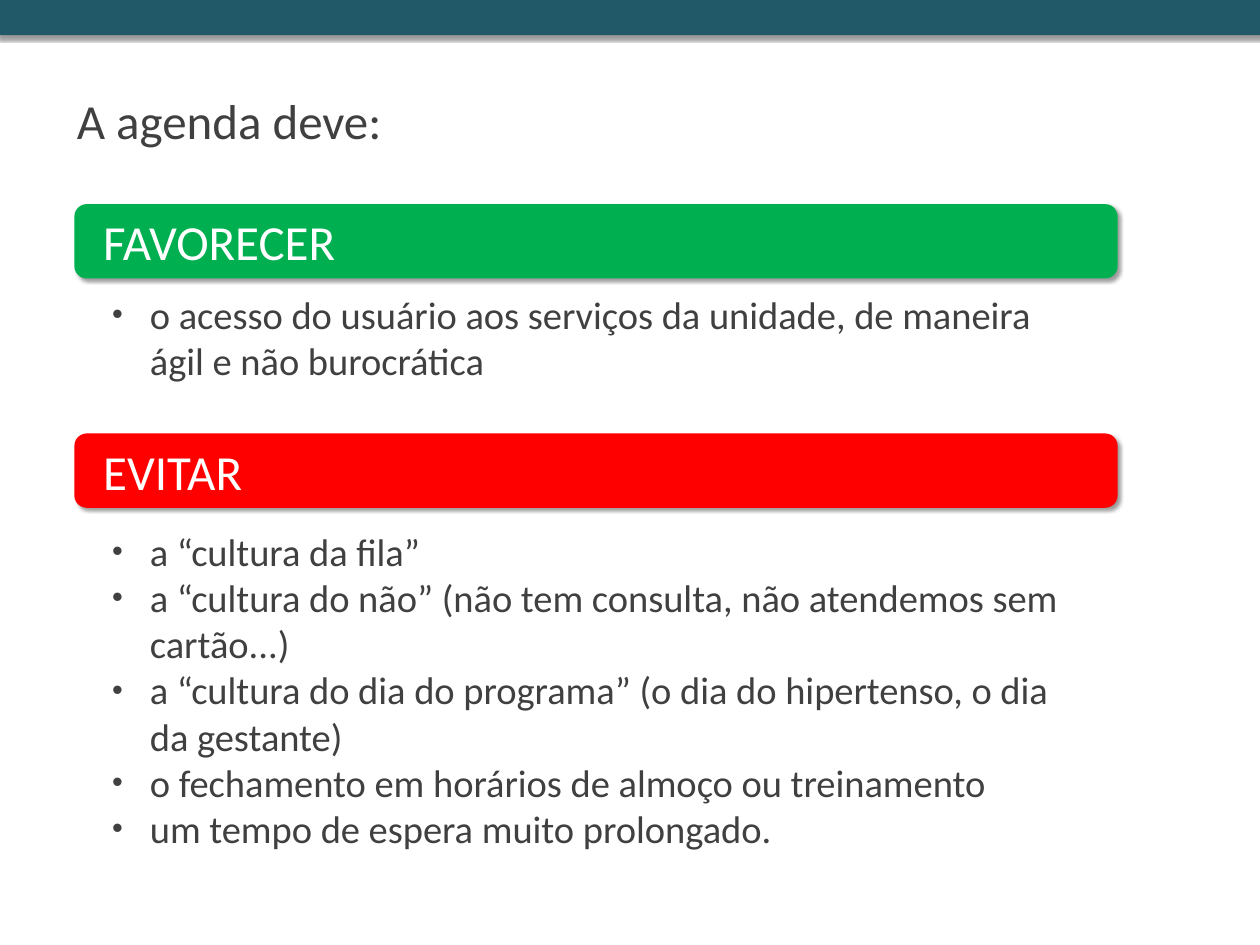
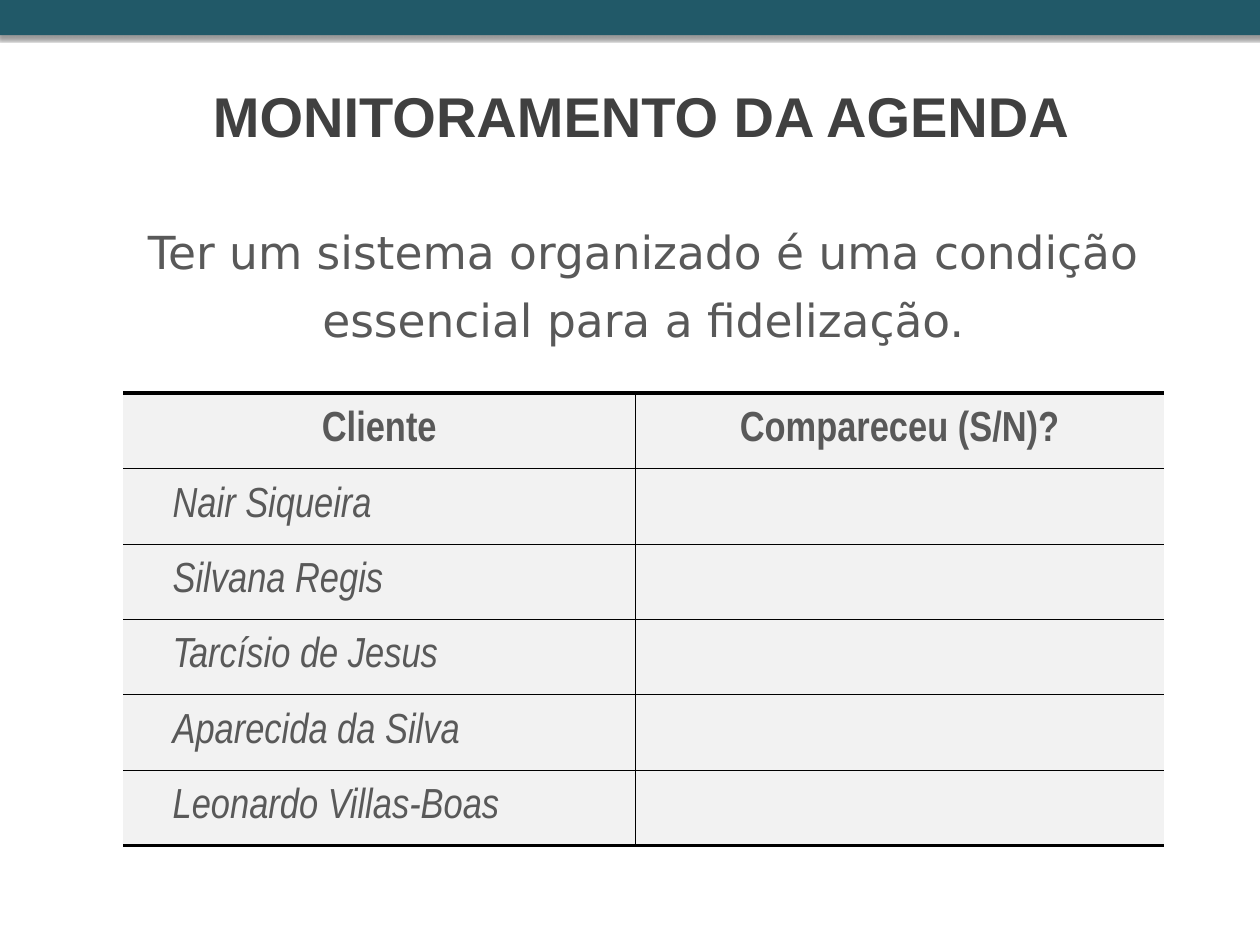
"""Build two slides on how a health unit keeps and monitors its agenda."""
from lxml.etree import SubElement
from pptx import Presentation
from pptx.dml.color import RGBColor
from pptx.enum.shapes import MSO_SHAPE as Preset
from pptx.enum.text import MSO_ANCHOR as Anchor, MSO_AUTO_SIZE as AutoSize, PP_ALIGN as Align
from pptx.oxml import parse_xml
from pptx.oxml.ns import nsdecls, qn
from pptx.util import Inches, Pt

TEAL = RGBColor(0x21, 0x59, 0x68)
GREEN = RGBColor(0x00, 0xB0, 0x50)
RED = RGBColor(0xFF, 0x00, 0x00)
WHITE = RGBColor(0xFF, 0xFF, 0xFF)
BLACK = RGBColor(0x00, 0x00, 0x00)
DARK_GREY = RGBColor(0x40, 0x40, 0x40)
GREY = RGBColor(0x59, 0x59, 0x59)
PALE_GREY = RGBColor(0xF2, 0xF2, 0xF2)

TITLE_ONLY = 5
THIN, THICK = 0.25, 2.25

FAVOUR = ["o acesso do usuário aos serviços da unidade, de maneira ágil e não burocrática"]
AVOID = [
    "a “cultura da fila”",
    "a “cultura do não” (não tem consulta, não atendemos sem cartão...)",
    "a “cultura do dia do programa” (o dia do hipertenso, o dia da gestante)",
    "o fechamento em horários de almoço ou treinamento",
    "um tempo de espera muito prolongado.",
]
HEADINGS = ["Cliente", "Compareceu (S/N)?"]
CLIENTS = ["Nair Siqueira", "Silvana Regis", "Tarcísio de Jesus",
           "Aparecida da Silva", "Leonardo Villas-Boas"]


def style(paragraph, size, name, color, bold=False, italic=False):
    """Set the font of a whole paragraph."""
    font = paragraph.font
    font.size, font.name, font.bold, font.italic = Pt(size), name, bold, italic
    font.color.rgb = color


def add_shadow(shape, angle):
    """Give a shape a soft dark shadow towards an angle in degrees."""
    shape.shadow.inherit = False
    effects = shape.element.spPr.find(qn("a:effectLst"))
    effects.append(parse_xml(
        f'<a:outerShdw {nsdecls("a")} blurRad="{Pt(2)}" dist="{Pt(2)}" '
        f'dir="{angle * 60000}" rotWithShape="0"><a:srgbClr val="{BLACK}">'
        '<a:alpha val="40000"/></a:srgbClr></a:outerShdw>'))


def add_block(slide, preset, box, color, shadow_angle):
    """Add a filled shape without outline."""
    block = slide.shapes.add_shape(preset, *map(Inches, box))
    block.fill.solid()
    block.fill.fore_color.rgb = color
    block.line.fill.background()
    add_shadow(block, shadow_angle)
    return block


def add_master_band(prs, slide):
    """Put the teal top band on the master, behind everything else."""
    band = add_block(slide, Preset.RECTANGLE, (-0.02, 0, 10.04, 0.28), TEAL, 90)
    band.element.nvSpPr.cNvPr.set("id", "100")
    prs.slide_master.shapes.element.insert(2, band.element)


def add_titled_slide(prs, title, box, size, name, bold=False, wrap=True):
    """Add a slide and place its left-aligned title."""
    slide = prs.slides.add_slide(prs.slide_layouts[TITLE_ONLY])
    heading = slide.shapes.title
    heading.left, heading.top, heading.width, heading.height = map(Inches, box)
    frame = heading.text_frame
    frame.text = title
    frame.vertical_anchor = Anchor.TOP
    frame.word_wrap = wrap
    frame.auto_size = AutoSize.SHAPE_TO_FIT_TEXT
    paragraph = frame.paragraphs[0]
    paragraph.alignment = Align.LEFT
    paragraph.line_spacing = 1.15
    style(paragraph, size, name, DARK_GREY, bold)
    return slide


def add_text_frame(slide, box):
    """Add a wrapping text box and return its frame."""
    frame = slide.shapes.add_textbox(*map(Inches, box)).text_frame
    frame.word_wrap = True
    return frame


def add_bullets(slide, top, height, items):
    """Add a bulleted list under a section bar."""
    frame = add_text_frame(slide, (0.59, top, 8.27, height))
    frame.margin_left = frame.margin_right = Inches(0.2)
    frame.text = "\n".join(items)
    for paragraph in frame.paragraphs:
        props = paragraph._p.get_or_add_pPr()
        props.set("marL", str(Inches(0.4)))
        props.set("indent", str(Inches(-0.3)))
        SubElement(props, qn("a:buSzPct"), val="80000")
        SubElement(props, qn("a:buFont"), typeface="Arial")
        SubElement(props, qn("a:buChar"), char="•")
        style(paragraph, 22, "Calibri", DARK_GREY)


def add_section_bar(slide, top, label, color):
    """Add a rounded bar that heads a list."""
    bar = add_block(slide, Preset.ROUNDED_RECTANGLE, (0.59, top, 8.28, 0.59), color, 45)
    frame = bar.text_frame
    frame.margin_left = frame.margin_right = Inches(0.2)
    frame.vertical_anchor = Anchor.MIDDLE
    frame.text = label
    frame.paragraphs[0].alignment = Align.LEFT
    style(frame.paragraphs[0], 28, "Calibri", WHITE)


def set_borders(cell, left, right, top, bottom):
    """Draw the four cell borders in points; zero means no line."""
    props = cell._tc.get_or_add_tcPr()
    for index, (side, width) in enumerate(zip("LRTB", (left, right, top, bottom))):
        paint = f'<a:solidFill><a:srgbClr val="{BLACK}"/></a:solidFill>' if width else "<a:noFill/>"
        props.insert(index, parse_xml(
            f'<a:ln{side} {nsdecls("a")} w="{Pt(width)}">{paint}</a:ln{side}>'))


def fill_cell(cell, text, is_heading):
    """Fill a cell and write its heading or client name."""
    cell.fill.solid()
    cell.fill.fore_color.rgb = PALE_GREY
    cell.vertical_anchor = Anchor.MIDDLE
    if not text:
        return
    cell.text = text
    paragraph = cell.text_frame.paragraphs[0]
    paragraph.space_before = Pt(4.8)
    if is_heading:
        paragraph.alignment = Align.CENTER
    else:
        paragraph._p.get_or_add_pPr().set("marL", str(Inches(0.29)))
    style(paragraph, 24, "Arial Narrow", GREY, bold=is_heading, italic=not is_heading)


def add_attendance_table(slide):
    """Add the table of clients and their attendance."""
    rows = [HEADINGS] + [[client, ""] for client in CLIENTS]
    last = len(rows) - 1
    table = slide.shapes.add_table(
        len(rows), 2, Inches(0.98), Inches(3.12), Inches(8.26), Inches(3.59)).table
    table.first_row = table.horz_banding = False
    for column, width in zip(table.columns, (4.06, 4.2)):
        column.width = Inches(width)
    for r, texts in enumerate(rows):
        for c, text in enumerate(texts):
            cell = table.cell(r, c)
            fill_cell(cell, text, r == 0)
            set_borders(cell, THIN if c else 0, 0 if c else THIN,
                        THIN if r else THICK, THICK if r == last else THIN)


def add_statement(slide, text):
    """Add the centred sentence above the table."""
    frame = add_text_frame(slide, (0.98, 1.62, 8.26, 2.05))
    frame.text = text
    paragraph = frame.paragraphs[0]
    paragraph.alignment = Align.CENTER
    paragraph.line_spacing = 1.25
    paragraph.space_before = Pt(5.2)
    style(paragraph, 26, "DejaVu Sans", GREY)


def main():
    """Build and save the presentation."""
    prs = Presentation()
    prs.slide_width, prs.slide_height = Inches(10), Inches(7.5)

    duties = add_titled_slide(prs, "A agenda deve:", (0.51, 0.6, 6.85, 0.64), 28, "Calibri")
    add_master_band(prs, duties)
    add_bullets(duties, 4.14, 2.99, AVOID)
    add_section_bar(duties, 1.62, "FAVORECER", GREEN)
    add_section_bar(duties, 3.44, "EVITAR", RED)
    add_bullets(duties, 2.26, 1.02, FAVOUR)

    monitoring = add_titled_slide(prs, "MONITORAMENTO DA AGENDA", (1.59, 0.52, 7.06, 0.72),
                                  32, "Arial", bold=True, wrap=False)
    add_attendance_table(monitoring)
    add_statement(monitoring, "Ter um sistema organizado é uma condição "
                              "essencial para a fidelização.")
    prs.save("out.pptx")


if __name__ == "__main__":
    main()
